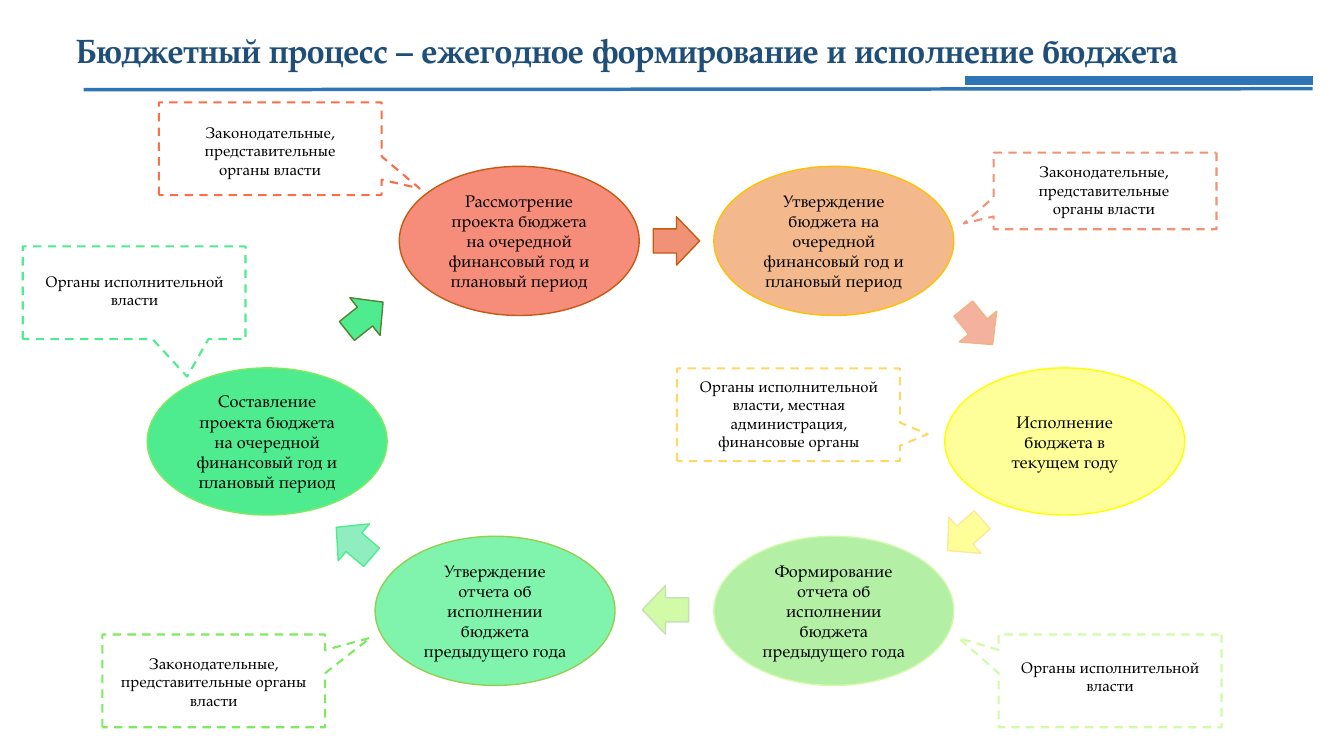
from lxml import etree
from pptx import Presentation
from pptx.dml.color import RGBColor
from pptx.enum import dml, shapes, text
from pptx.oxml import ns
from pptx.util import Emu, Pt

EMU_PER_PX = 9144  # 100 px to the inch
FONT = "TeX Gyre Pagella"
NAVY = RGBColor(0x1F, 0x4E, 0x79)
BLUE = RGBColor(0x2E, 0x75, 0xB6)
BLACK = RGBColor(0, 0, 0)
RUST = RGBColor(0xC5, 0x5A, 0x11)
RED = RGBColor(0xF6, 0x8C, 0x7A)
ORANGE = RGBColor(0xF9, 0x6F, 0x49)
SALMON = RGBColor(0xEF, 0x92, 0x75)
PINK = RGBColor(0xF4, 0xB2, 0x9E)
APRICOT = RGBColor(0xF4, 0xB1, 0x83)
PEACH = RGBColor(0xF3, 0xB9, 0x8D)
AMBER = RGBColor(0xFF, 0xC0, 0x00)
GOLD = RGBColor(0xFF, 0xD9, 0x66)
CREAM = RGBColor(0xFF, 0xE6, 0x99)
YELLOW = RGBColor(0xFF, 0xFF, 0x00)
LEMON = RGBColor(0xFF, 0xFF, 0x99)
LIME = RGBColor(0xD1, 0xFB, 0xA7)
PISTACHIO = RGBColor(0xB3, 0xEF, 0xA5)
SAGE = RGBColor(0xC5, 0xE0, 0xB4)
OLIVE = RGBColor(0x92, 0xD0, 0x50)
GRASS = RGBColor(0x7E, 0xEA, 0x60)
FOREST = RGBColor(0x54, 0x82, 0x35)
GREEN = RGBColor(0x4E, 0xEC, 0x8E)
MINT = RGBColor(0x80, 0xF4, 0xAC)
AQUA = RGBColor(0x8F, 0xED, 0xC0)

TITLE = "Бюджетный процесс – ежегодное формирование и исполнение бюджета"
TITLE_BOX = (22, 3, 1200, 93)
# start x, start y, end x, end y, points
RULES = [(957, 80, 1302, 80, 6), (83, 89, 1302, 88, 2.5)]

STAGE_WIDTH = 238
ROWS = {"top": (239, 148), "middle": (438, 146), "bottom": (606, 148)}  # centre y, height
# centre x, row, fill, outline, wording
STAGES = [
    (515, "top", RED, RUST,
     "Рассмотрение проекта бюджета на очередной финансовый год и плановый период"),
    (827, "top", PEACH, AMBER,
     "Утверждение бюджета на очередной финансовый год и плановый период"),
    (1056, "middle", LEMON, YELLOW, "Исполнение бюджета в текущем году"),
    (827, "bottom", PISTACHIO, LIME,
     "Формирование отчета об исполнении бюджета предыдущего года"),
    (491, "bottom", MINT, OLIVE,
     "Утверждение отчета об исполнении бюджета предыдущего года"),
    (265, "middle", GREEN, GRASS,
     "Составление проекта бюджета на очередной финансовый год и плановый период"),
]

ARROW_SIZE = (48, 46)
# left, top, rotation, fill, outline
ARROWS = [
    (647, 216, 270, SALMON, RUST),
    (946, 301, 320.7, PINK, APRICOT),
    (933, 508, 48.3, LEMON, CREAM),
    (636, 582, 90, LIME, SAGE),
    (327, 515, 130.3, AQUA, GREEN),
    (338, 291, 231.3, GREEN, FOREST),
]

LEGISLATIVE = "Законодательные, представительные органы власти"
EXECUTIVE = "Органы исполнительной власти"
LOCAL = "Органы исполнительной власти, местная администрация, финансовые органы"
CALLOUT_LENGTH = 221
# left, top, width before rotation, rotation, tip, outline, wording, text box
CALLOUTS = [
    (222, 37, 92, 270, (-0.429, 0.671), ORANGE, LEGISLATIVE, (175, 117, 186, 65)),
    (1058, 79, 76, 90, (0.424, 0.634), SALMON, LEGISLATIVE, (1002, 156, 186, 65)),
    (736, 301, 92, 270, (-0.208, 0.625), GOLD, LOCAL, (673, 369, 219, 84)),
    (1055, 565, 92, 90, (-0.462, 0.68), LIME, EXECUTIVE, (1002, 648, 198, 47)),
    (166, 565, 92, 270, (0.465, 0.703), GRASS, LEGISLATIVE, (103, 644, 218, 66)),
    (87, 180, 92, 270, (-0.904, 0.238), GREEN, EXECUTIVE, (35, 265, 197, 47)),
]


def px(*lengths):
    return [Emu(round(length * EMU_PER_PX)) for length in lengths]


def add_figure(slide, kind, box, fill, outline, points=1, rotation=0):
    shape = slide.shapes.add_shape(kind, *px(*box))
    shape.shadow.inherit = False
    shape.rotation = rotation
    if fill is None:
        shape.fill.background()
    else:
        shape.fill.solid()
        shape.fill.fore_color.rgb = fill
    shape.line.color.rgb = outline
    shape.line.width = Pt(points)
    return shape


def write(shape, wording, size, anchor=text.MSO_ANCHOR.MIDDLE, color=BLACK, bold=False):
    frame = shape.text_frame
    frame.word_wrap = True
    frame.vertical_anchor = anchor
    paragraph = frame.paragraphs[0]
    paragraph.alignment = text.PP_ALIGN.CENTER
    run = paragraph.add_run()
    run.text = wording
    for name, value in {"name": FONT, "size": Pt(size), "bold": bold}.items():
        setattr(run.font, name, value)
    run.font.color.rgb = color


def add_rule(slide, ends, points):
    rule = slide.shapes.add_connector(shapes.MSO_CONNECTOR.STRAIGHT, *px(*ends))
    rule.line.color.rgb = BLUE
    rule.line.width = Pt(points)
    etree.SubElement(rule._element.spPr, ns.qn("a:effectLst"))


def main():
    presentation = Presentation()
    presentation.slide_width, presentation.slide_height = px(1333, 750)
    slide = presentation.slides.add_slide(presentation.slide_layouts[6])
    kinds = shapes.MSO_SHAPE

    title = slide.shapes.add_textbox(*px(*TITLE_BOX))
    write(title, TITLE, 24, color=NAVY, bold=True)
    for *ends, points in RULES:
        add_rule(slide, ends, points)

    for center_x, row, fill, outline, wording in STAGES:
        center_y, height = ROWS[row]
        box = (center_x - STAGE_WIDTH / 2, center_y - height / 2, STAGE_WIDTH, height)
        write(add_figure(slide, kinds.OVAL, box, fill, outline), wording, 12)

    for left, top, rotation, fill, outline in ARROWS:
        add_figure(slide, kinds.DOWN_ARROW, (left, top, *ARROW_SIZE), fill, outline,
                   rotation=rotation)

    for left, top, width, rotation, tip, outline, wording, text_box in CALLOUTS:
        callout = add_figure(slide, kinds.RECTANGULAR_CALLOUT,
                             (left, top, width, CALLOUT_LENGTH), None, outline, 1.5, rotation)
        callout.line.dash_style = dml.MSO_LINE.DASH
        for index, offset in enumerate(tip):
            callout.adjustments[index] = offset
        label = slide.shapes.add_textbox(*px(*text_box))
        write(label, wording, 11, text.MSO_ANCHOR.TOP)

    presentation.save("out.pptx")


if __name__ == "__main__":
    main()
